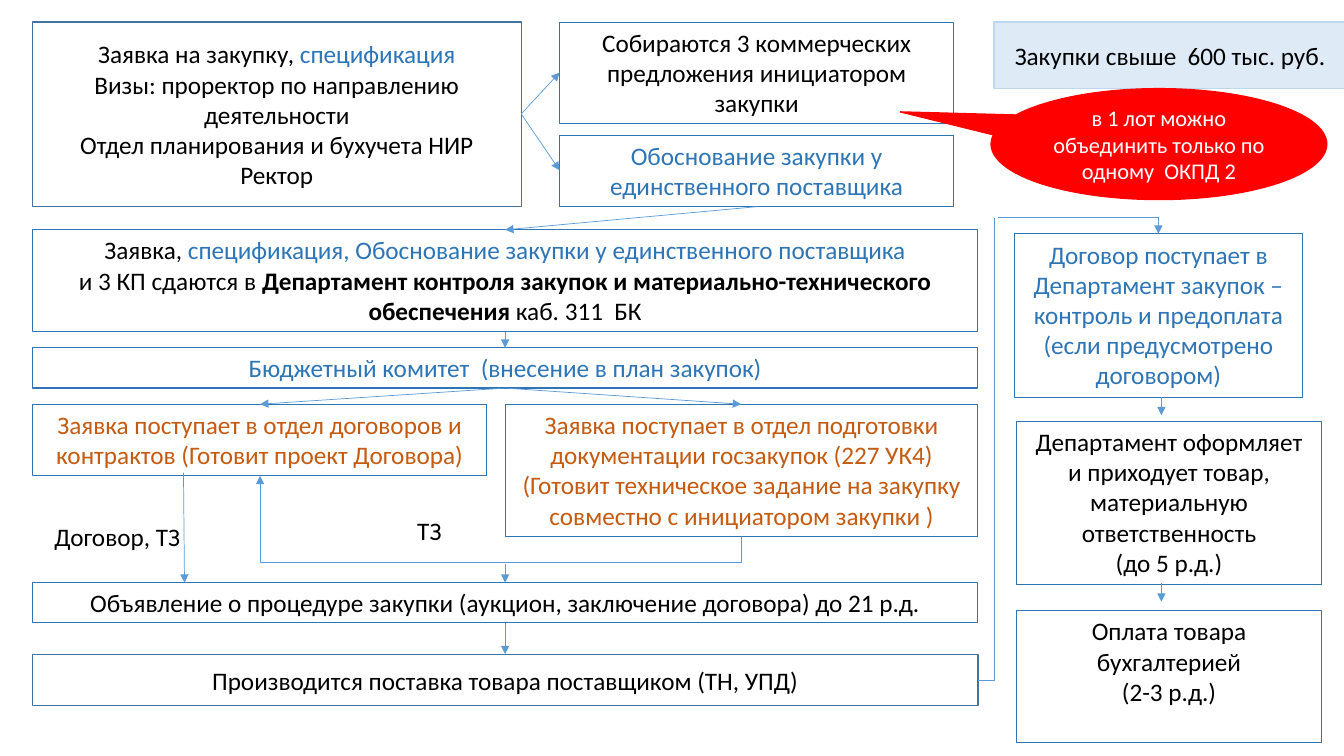
from lxml.etree import SubElement
from pptx import Presentation
from pptx.dml.color import RGBColor
from pptx.enum.shapes import MSO_CONNECTOR, MSO_SHAPE
from pptx.enum.text import MSO_ANCHOR, PP_ALIGN
from pptx.oxml.ns import qn
from pptx.util import Emu, Pt

BLACK = RGBColor(0x00, 0x00, 0x00)
WHITE = RGBColor(0xFF, 0xFF, 0xFF)
RED = RGBColor(0xFF, 0x00, 0x00)
BLUE = RGBColor(0x2E, 0x75, 0xB6)
ORANGE = RGBColor(0xC5, 0x5A, 0x11)
FRAME = RGBColor(0x43, 0x73, 0x9E)
ARROW = RGBColor(0x5B, 0x9B, 0xD5)
PALE = RGBColor(0xDE, 0xEB, 0xF7)
PALE_LINE = RGBColor(0xBD, 0xD7, 0xEE)


def px(n):
    return Emu(n * 9144)


class Flowchart:
    """Draws boxes, labels and arrows on one slide in a shared style."""

    font = "Calibri"

    def __init__(self, prs):
        self.s = prs.slides.add_slide(prs.slide_layouts[6])

    def add_text(self, tf, paragraphs, color, size, align):
        for i, runs in enumerate(paragraphs):
            p = tf.paragraphs[0] if i == 0 else tf.add_paragraph()
            p.alignment = align
            p.font.name, p.font.size = self.font, Pt(size)
            p.font.color.rgb = color
            for text, run_color, bold in [(runs, None, None)] if isinstance(runs, str) else runs:
                r = p.add_run()
                r.text = text
                if run_color is not None:
                    r.font.color.rgb = run_color
                if bold:
                    r.font.bold = True

    def box(self, x, y, w, h, *paragraphs, color=BLACK, size=18, fill=None, line=BLUE,
            width=0.75, anchor=MSO_ANCHOR.TOP, shape=MSO_SHAPE.RECTANGLE):
        sp = self.s.shapes.add_shape(shape, px(x), px(y), px(w), px(h))
        sp.shadow.inherit = False
        if fill is None:
            sp.fill.background()
        else:
            sp.fill.solid()
            sp.fill.fore_color.rgb = fill
        sp.line.color.rgb, sp.line.width = line, Pt(width)
        tf = sp.text_frame
        tf.word_wrap, tf.vertical_anchor = True, anchor
        self.add_text(tf, paragraphs, color, size, PP_ALIGN.CENTER)
        return sp

    def label(self, x, y, w, h, text):
        tf = self.s.shapes.add_textbox(px(x), px(y), px(w), px(h)).text_frame
        tf.word_wrap = False
        self.add_text(tf, [text], BLACK, 18, PP_ALIGN.LEFT)

    def arrow(self, x1, y1, x2, y2, kind=MSO_CONNECTOR.STRAIGHT, head=True):
        cn = self.s.shapes.add_connector(kind, px(x1), px(y1), px(x2), px(y2))
        cn.line.color.rgb, cn.line.width = ARROW, Pt(0.5)
        spPr = cn._element.spPr
        if head:
            SubElement(spPr.find(qn("a:ln")), qn("a:tailEnd"), type="triangle")
        SubElement(spPr, qn("a:effectLst"))
        return cn

    def corner(self, x1, y1, x2, y2, head=True):
        cn = self.arrow(x1, y1, x2, y2, MSO_CONNECTOR.ELBOW, head)
        cn._element.spPr.find(qn("a:prstGeom")).set("prst", "bentConnector2")

    def loop(self, x1, y1, x2, y2, depth):
        cx, cy = (x1 + x2) / 2, (y1 + y2) / 2
        dx, dy = (x1 - x2) / 2, (y1 - y2) / 2
        cn = self.arrow(round(cx + dy), round(cy - dx), round(cx - dy), round(cy + dx),
                        MSO_CONNECTOR.ELBOW)
        spPr = cn._element.spPr
        spPr.find(qn("a:xfrm")).set("rot", "5400000")
        guides = spPr.find(qn("a:prstGeom")).find(qn("a:avLst"))
        SubElement(guides, qn("a:gd"), name="adj1",
                   fmla=f"val {round(-100000 * depth / (y1 - y2))}")


def main():
    prs = Presentation()
    prs.slide_width, prs.slide_height = px(1333), px(750)
    f = Flowchart(prs)
    middle = MSO_ANCHOR.MIDDLE

    f.box(986, 22, 349, 66, "Закупки свыше  600 тыс. руб.",
          fill=PALE, line=PALE_LINE, width=1, anchor=middle)
    f.box(32, 22, 485, 183,
          [("Заявка на закупку, ", None, None), ("спецификация", BLUE, None)],
          "Визы: проректор по направлению деятельности",
          "Отдел планирования и бухучета НИР", "Ректор",
          fill=WHITE, line=FRAME, width=1, anchor=middle)
    f.box(555, 22, 391, 101, "Собираются 3 коммерческих предложения инициатором закупки")
    f.box(555, 134, 391, 71, "Обоснование закупки у единственного поставщика", color=BLUE)

    f.box(32, 228, 938, 101,
          [("Заявка, ", None, None),
           ("спецификация, Обоснование закупки у единственного поставщика", BLUE, None)],
          [("и 3 КП сдаются в ", None, None),
           ("Департамент контроля закупок и материально-технического обеспечения ", None, True),
           ("каб. 311  БК", None, None)])
    f.box(32, 345, 938, 40, "Бюджетный комитет  (внесение в план закупок)", color=BLUE)
    f.box(32, 401, 451, 71,
          "Заявка поступает в отдел договоров и контрактов (Готовит проект Договора)",
          color=ORANGE)
    f.box(501, 401, 469, 131,
          "Заявка поступает в отдел подготовки документации госзакупок (227 УК4) "
          "(Готовит техническое задание на закупку совместно с инициатором закупки )",
          color=ORANGE)
    f.box(32, 578, 938, 40,
          "Объявление о процедуре закупки (аукцион, заключение договора) до 21 р.д.")
    f.box(32, 649, 938, 51, "Производится поставка товара поставщиком (ТН, УПД)",
          fill=WHITE, line=FRAME, width=1, anchor=middle)

    f.box(1006, 232, 286, 162,
          "Договор поступает в Департамент закупок – контроль и предоплата "
          "(если предусмотрено договором)", color=BLUE)
    f.box(1008, 418, 303, 162,
          "Департамент оформляет и приходует товар, материальную ответственность",
          "(до 5 р.д.)")
    f.box(1008, 606, 303, 131, "Оплата товара бухгалтерией", "(2-3 р.д.)")

    f.label(404, 506, 44, 40, "ТЗ")
    f.label(44, 512, 146, 40, "Договор, ТЗ")

    for ends in [(517, 113, 555, 72), (517, 113, 555, 169), (751, 205, 501, 228),
                 (501, 329, 501, 345), (501, 385, 258, 401), (501, 385, 735, 401),
                 (182, 469, 183, 578), (501, 560, 501, 578), (501, 618, 501, 649),
                 (1152, 394, 1152, 412), (1152, 578, 1152, 597)]:
        f.arrow(*ends)
    f.loop(735, 533, 258, 472, depth=25)
    f.corner(970, 675, 986, 216, head=False)
    f.corner(990, 216, 1149, 232)

    callout = f.box(983, 88, 333, 110, "в 1 лот можно объединить только по одному  ОКПД 2",
                    color=WHITE, size=16, fill=RED, line=RED, width=1, anchor=middle,
                    shape=MSO_SHAPE.OVAL_CALLOUT)
    callout.adjustments[0], callout.adjustments[1] = -0.77, -0.29

    prs.save("out.pptx")


if __name__ == "__main__":
    main()
